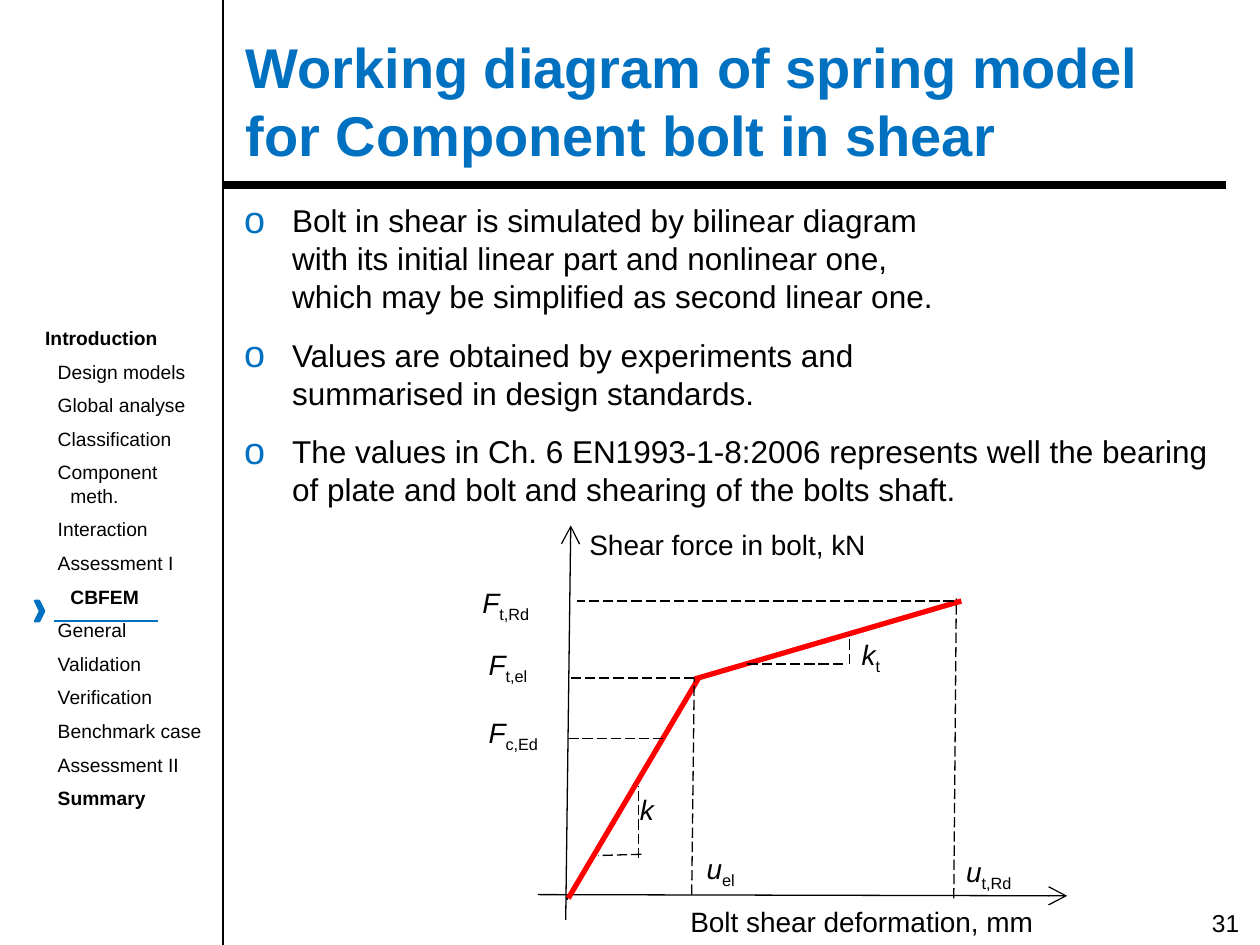
from dataclasses import dataclass
from typing import Any

from lxml.etree import SubElement
from pptx import Presentation
from pptx.dml.color import RGBColor
from pptx.enum.dml import MSO_LINE_DASH_STYLE as Dash
from pptx.enum.shapes import MSO_CONNECTOR as Conn
from pptx.enum.text import MSO_ANCHOR as Anchor
from pptx.oxml.ns import qn
from pptx.util import Inches, Pt

COLORS = {"black": "000000", "blue": "0070C0", "red": "FF0000"}


@dataclass
class Line:
    x1: float
    y1: float
    x2: float
    y2: float
    color: str = "black"
    width: float = 0.75
    dashed: bool = False
    arrow: bool = False
    kind: Any = Conn.STRAIGHT


@dataclass
class Label:
    x: float
    y: float
    w: float
    h: float
    symbol: str
    sub: str = ""
    italic: bool = True


@dataclass
class MenuItem:
    text: str
    margin: float = 0.1
    hanging: float = 0
    bold: bool = False


FRAME = [
    Line(1.77, 7.5, 1.77, 0),
    Line(1.77, 1.47, 9.73, 1.47, width=4.5),
]
DIAGRAM = [
    Line(7.57, 7.13, 7.59, 4.75, dashed=True),
    Line(4.49, 7.3, 4.53, 4.17, arrow=True),
    Line(4.27, 7.1, 8.47, 7.11, arrow=True),
    Line(4.49, 7.12, 4.51, 7.13, width=1.5, kind=Conn.ELBOW),
    Line(4.51, 7.13, 5.54, 5.39, "red", 3),
    Line(7.63, 4.77, 5.51, 5.39, "red", 3),
    Line(7.57, 4.77, 4.58, 4.77, dashed=True),
    Line(5.49, 7.1, 5.51, 5.38, dashed=True),
    Line(4.53, 5.38, 5.51, 5.38, dashed=True),
    Line(4.51, 5.86, 5.26, 5.86, dashed=True),
    Line(5.07, 6.81, 5.07, 6.24, dashed=True),
    Line(5.09, 6.78, 4.75, 6.79, dashed=True),
    Line(6.69, 5.27, 5.91, 5.27, dashed=True),
    Line(6.74, 5.27, 6.74, 5.04, dashed=True),
]
LABELS = [
    Label(4.58, 4.14, 4.43, 0.45, "Shear force in bolt, kN", italic=False),
    Label(5.38, 7.13, 3.48, 0.39, "Bolt shear deformation, mm", italic=False),
    Label(5.51, 6.71, 0.85, 0.47, "u", "el"),
    Label(7.57, 6.73, 0.94, 0.51, "u", "t,Rd"),
    Label(3.73, 4.6, 1.03, 0.44, "F", "t,Rd"),
    Label(3.78, 5.09, 1.02, 0.45, "F", "t,el"),
    Label(3.78, 5.63, 0.97, 0.48, "F", "c,Ed"),
    Label(4.98, 6.24, 0.38, 0.42, "k"),
    Label(6.74, 5.01, 0.75, 0.54, "k", "t"),
]
TOPICS = ["Design models", "Global analyse", "Classification",
          "Component meth.", "Interaction", "Assessment I"]
CBFEM_TOPICS = ["General", "Validation", "Verification",
                "Benchmark case", "Assessment II"]
MENU = [
    MenuItem("Introduction", 0, bold=True),
    *[MenuItem(t, 0.2, -0.1) for t in TOPICS],
    MenuItem("CBFEM", 0.2, bold=True),
    *[MenuItem(t) for t in CBFEM_TOPICS],
    MenuItem("Summary", bold=True),
]
TITLE = ["Working diagram of spring model", "for Component bolt in shear"]
BULLETS = [
    ["Bolt in shear is simulated by bilinear diagram",
     "with its initial linear part and nonlinear one,",
     "which may be simplified as second linear one."],
    ["Values are obtained by experiments and",
     "summarised in design standards."],
    ["The values in Ch. 6 EN1993-1-8:2006 represents well the bearing",
     "of plate and bolt and shearing of the bolts shaft."],
]
MARKER = [(0.28, 4.77), (0.31, 4.77), (0.35, 4.85),
          (0.31, 4.93), (0.28, 4.93), (0.32, 4.85)]


def rgb(name: str) -> RGBColor:
    return RGBColor.from_string(COLORS[name])


def add_line(s: Any, line: Line) -> None:
    ends = [Inches(v) for v in (line.x1, line.y1, line.x2, line.y2)]
    c = s.shapes.add_connector(line.kind, *ends)
    c.line.color.rgb = rgb(line.color)
    c.line.width = Pt(line.width)
    if line.dashed:
        c.line.dash_style = Dash.LONG_DASH
    if line.arrow:
        SubElement(c.line._get_or_add_ln(), qn("a:tailEnd"), type="arrow", w="lg", len="lg")
    SubElement(c._element.spPr, qn("a:effectLst"))


def add_box(s: Any, x: float, y: float, w: float, h: float, wrap: bool = True) -> Any:
    tf = s.shapes.add_textbox(Inches(x), Inches(y), Inches(w), Inches(h)).text_frame
    tf.word_wrap = wrap
    return tf


def add_run(p: Any, text: str, size: float, color: str = "black", **extra: Any) -> Any:
    r = p.add_run()
    r.text = text
    for name, value in {"name": "Arial", "size": Pt(size), **extra}.items():
        setattr(r.font, name, value)
    r.font.color.rgb = rgb(color)
    return r


def add_lines(p: Any, lines: list[str], size: float, color: str = "black", **extra: Any) -> None:
    for i, text in enumerate(lines):
        if i:
            p.add_line_break()
        add_run(p, text, size, color, **extra)


def next_paragraph(tf: Any, index: int, gap: float) -> Any:
    if index == 0:
        return tf.paragraphs[0]
    p = tf.add_paragraph()
    p.space_before = Pt(gap)
    return p


def set_indent(p: Any, margin: float, hanging: float) -> Any:
    pPr = p._p.get_or_add_pPr()
    pPr.set("marL", str(Inches(margin)))
    pPr.set("indent", str(Inches(hanging)))
    return pPr


def add_menu(s: Any) -> None:
    tf = add_box(s, 0.26, 2.54, 1.51, 3.97)
    for i, item in enumerate(MENU):
        p = next_paragraph(tf, i, 6)
        set_indent(p, item.margin, item.hanging)
        add_run(p, item.text, 11, bold=item.bold)


def add_bullets(s: Any) -> None:
    tf = add_box(s, 1.84, 1.55, 8.16, 2.6)
    for i, lines in enumerate(BULLETS):
        p = next_paragraph(tf, i, 12)
        pPr = set_indent(p, 0.38, -0.38)
        SubElement(SubElement(pPr, qn("a:buClr")), qn("a:srgbClr"), val=COLORS["blue"])
        SubElement(pPr, qn("a:buSzPct"), val="120000")
        SubElement(pPr, qn("a:buFont"), typeface="Arial")
        SubElement(pPr, qn("a:buChar"), char="o")
        add_lines(p, lines, 18)


def add_label(s: Any, label: Label) -> None:
    p = add_box(s, label.x, label.y, label.w, label.h).paragraphs[0]
    add_run(p, label.symbol, 16, italic=label.italic)
    if label.sub:
        r = add_run(p, label.sub, 16, italic=False)
        r.font._element.set("baseline", "-25000")


def add_marker(s: Any) -> None:
    points = [(Inches(x), Inches(y)) for x, y in MARKER]
    fb = s.shapes.build_freeform(*points[0])
    fb.add_line_segments(points[1:])
    sp = fb.convert_to_shape()
    sp.shadow.inherit = False
    sp.fill.solid()
    sp.fill.fore_color.rgb = sp.line.color.rgb = rgb("blue")
    sp.line.width = Pt(1.5)
    add_line(s, Line(0.43, 4.93, 1.25, 4.93, "blue", 1.5))


def main() -> None:
    prs = Presentation()
    prs.slide_width, prs.slide_height = Inches(10), Inches(7.5)
    s = prs.slides.add_slide(prs.slide_layouts[6])
    for line in FRAME:
        add_line(s, line)
    add_menu(s)
    add_run(add_box(s, 9.52, 7.16, 0.44, 0.34, False).paragraphs[0], "31", 14)
    tf = add_box(s, 1.85, 0.29, 8.15, 1.01)
    tf.vertical_anchor = Anchor.MIDDLE
    add_lines(tf.paragraphs[0], TITLE, 32, "blue", bold=True)
    add_bullets(s)
    for line in DIAGRAM:
        add_line(s, line)
    for label in LABELS:
        add_label(s, label)
    add_marker(s)
    prs.save("out.pptx")


if __name__ == "__main__":
    main()
